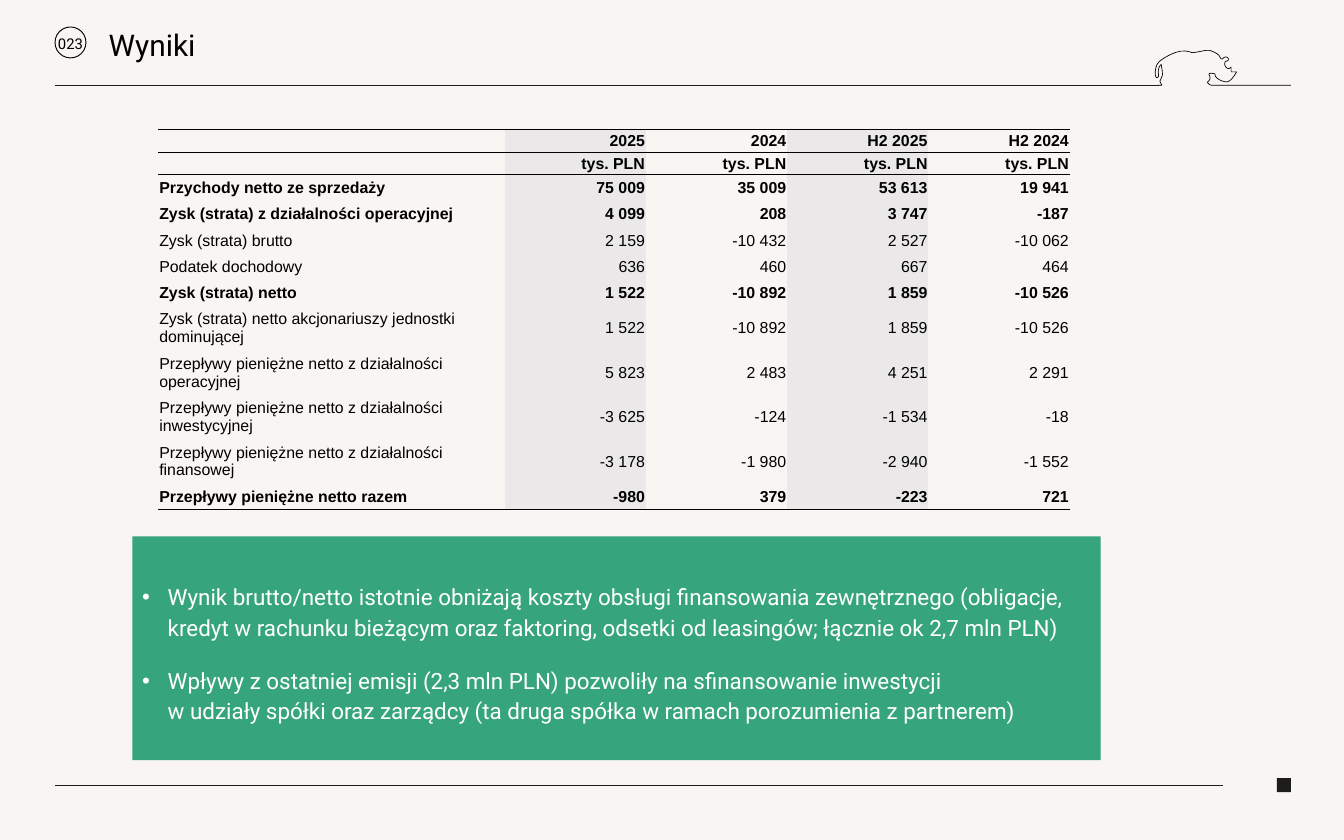
from pptx import Presentation
from pptx.dml.color import RGBColor
from pptx.enum.shapes import MSO_CONNECTOR as CONN, MSO_SHAPE as SHAPE
from pptx.enum.text import MSO_ANCHOR as ANCHOR, PP_ALIGN as ALIGN
from pptx.oxml import parse_xml
from pptx.oxml.ns import nsdecls, qn
from pptx.util import Cm, Pt
from lxml import etree

COLORS = {"paper": "F8F5F2", "ink": "000000", "rule": "1D1D1B",
          "band": "EAE8E8", "green": "37A57C", "white": "FFFFFF"}
TITLE, NUMBER = "Wyniki", "023"
ROWS = [
    ("", "2025", "2024", "H2 2025", "H2 2024"),
    ("", "tys. PLN", "tys. PLN", "tys. PLN", "tys. PLN"),
    ("Przychody netto ze sprzedaży", "75 009", "35 009", "53 613", "19 941"),
    ("Zysk (strata) z działalności operacyjnej", "4 099", "208", "3 747", "-187"),
    ("Zysk (strata) brutto", "2 159", "-10 432", "2 527", "-10 062"),
    ("Podatek dochodowy", "636", "460", "667", "464"),
    ("Zysk (strata) netto", "1 522", "-10 892", "1 859", "-10 526"),
    ("Zysk (strata) netto akcjonariuszy jednostki dominującej",
     "1 522", "-10 892", "1 859", "-10 526"),
    ("Przepływy pieniężne netto z działalności operacyjnej",
     "5 823", "2 483", "4 251", "2 291"),
    ("Przepływy pieniężne netto z działalności inwestycyjnej",
     "-3 625", "-124", "-1 534", "-18"),
    ("Przepływy pieniężne netto z działalności finansowej",
     "-3 178", "-1 980", "-2 940", "-1 552"),
    ("Przepływy pieniężne netto razem", "-980", "379", "-223", "721"),
]
BOLD_ROWS = {0, 1, 2, 3, 6, 11}
HEADER_ROWS, TALL_ROWS = (0, 1), range(7, 11)
BORDERS = {0: ("T", "B"), 1: ("T",), len(ROWS) - 1: ("B",)}
BULLETS = [
    "Wynik brutto/netto istotnie obniżają koszty obsługi finansowania zewnętrznego "
    "(obligacje, kredyt w rachunku bieżącym oraz faktoring, odsetki od leasingów; "
    "łącznie ok 2,7 mln PLN)",
    "Wpływy z ostatniej emisji (2,3 mln PLN) pozwoliły na sfinansowanie inwestycji\v"
    "w udziały spółki oraz zarządcy (ta druga spółka w ramach porozumienia z partnerem)",
]
RULES = [(2.08, 43.79, 3.23), (2.08, 46.23, 29.67)]
ANIMAL_UNIT = 0.0254
ANIMAL_START = (1723, 127)
ANIMAL = [
    (1729, 127), (1726, 121),
    (1726, 121, 1727, 119, 1729, 114), (1731, 112, 1729, 102, 1728, 96),
    (1722, 100, 1724, 111, 1724, 111), (1725, 116, 1719, 120, 1719, 108),
    (1720, 96, 1723, 94, 1726, 91), (1729, 88, 1750, 74, 1764, 76),
    (1778, 78, 1769, 79, 1778, 78), (1787, 77, 1797, 73, 1803, 76),
    (1810, 79, 1814, 81, 1816, 86), (1818, 89, 1819, 88, 1821, 86),
    (1822, 85, 1825, 84, 1827, 86), (1829, 88, 1828, 91, 1825, 91),
    (1822, 91, 1822, 96, 1823, 98), (1824, 100, 1826, 102, 1828, 102),
    (1830, 102, 1832, 100, 1832, 100), (1832, 107), (1840, 107),
    (1840, 107, 1833, 121, 1826, 122), (1820, 122, 1807, 117, 1808, 110),
    (1804, 109, 1800, 109, 1800, 109), (1800, 109, 1798, 110, 1800, 113),
    (1802, 117, 1799, 121, 1797, 122), (1796, 122, 1799, 127, 1804, 127),
    (1921, 127),
]


def rgb(name):
    return RGBColor.from_string(COLORS[name])


def style(p, font, size, color, bold=False):
    for r in p.runs:
        f = r.font
        f.name, f.size, f.bold = font, Pt(size), bold
        f.color.rgb = rgb(color)


def paint(sp, fill=None, line=None, width=0.75):
    sp.shadow.inherit = False
    if fill:
        sp.fill.solid()
        sp.fill.fore_color.rgb = rgb(fill)
    else:
        sp.fill.background()
    if line:
        sp.line.color.rgb = rgb(line)
        sp.line.width = Pt(width)
    else:
        sp.line.fill.background()


def set_margins(box, left, top, right, bottom):
    box.margin_left, box.margin_top = Cm(left), Cm(top)
    box.margin_right, box.margin_bottom = Cm(right), Cm(bottom)


def add_label(s, box, text, size, align):
    tf = s.shapes.add_textbox(*map(Cm, box)).text_frame
    tf.word_wrap = True
    tf.vertical_anchor = ANCHOR.MIDDLE
    set_margins(tf, 0, 0, 0, 0)
    p = tf.paragraphs[0]
    p.text, p.alignment = text, align
    style(p, "Roboto", size, "ink")


def add_rule(s, x1, x2, y):
    c = s.shapes.add_connector(CONN.STRAIGHT, Cm(x1), Cm(y), Cm(x2), Cm(y))
    c.line.color.rgb = rgb("rule")
    c.line.width = Pt(0.75)
    etree.SubElement(c.element.spPr, qn("a:effectLst"))


def trace(start, segments, steps=6):
    points = [start]
    for seg in segments:
        if len(seg) == 2:
            points.append(seg)
            continue
        (x0, y0), (x1, y1, x2, y2, x3, y3) = points[-1], seg
        for i in range(1, steps + 1):
            t = i / steps
            u = 1 - t
            a, b, c, d = u ** 3, 3 * u * u * t, 3 * u * t * t, t ** 3
            points.append((a * x0 + b * x1 + c * x2 + d * x3,
                           a * y0 + b * y1 + c * y2 + d * y3))
    return [(Cm(x * ANIMAL_UNIT), Cm(y * ANIMAL_UNIT)) for x, y in points]


def add_animal(s):
    first, *rest = trace(ANIMAL_START, ANIMAL)
    builder = s.shapes.build_freeform(*first)
    builder.add_line_segments(rest, close=False)
    paint(builder.convert_to_shape(), line="ink")


def add_border(cell, side):
    cell._tc.get_or_add_tcPr().append(parse_xml(
        f'<a:ln{side} {nsdecls("a")} w="6350"><a:solidFill>'
        f'<a:srgbClr val="{COLORS["ink"]}"/></a:solidFill></a:ln{side}>'))


def add_results(s):
    heights = [0.86 if i in HEADER_ROWS else 1.68 if i in TALL_ROWS else 0.99
               for i in range(len(ROWS))]
    widths = [13.08] + [5.34] * 4
    tbl = s.shapes.add_table(len(ROWS), len(widths), Cm(5.99), Cm(4.88),
                             Cm(sum(widths)), Cm(sum(heights))).table
    tbl.first_row = tbl.horz_banding = False
    tbl._tbl.tblPr.find(qn("a:tableStyleId")).text = "{2D5ABB26-0587-4C30-8999-92F81FD0307C}"
    for col, w in zip(tbl.columns, widths):
        col.width = Cm(w)
    for i, (row, h) in enumerate(zip(ROWS, heights)):
        tbl.rows[i].height = Cm(h)
        for j, text in enumerate(row):
            cell = tbl.cell(i, j)
            set_margins(cell, 0.03, 0.03, 0.03, 0)
            cell.vertical_anchor = ANCHOR.MIDDLE
            for side in BORDERS.get(i, ()):
                add_border(cell, side)
            if j % 2:
                cell.fill.solid()
                cell.fill.fore_color.rgb = rgb("band")
            else:
                cell.fill.background()
            p = cell.text_frame.paragraphs[0]
            p.alignment = ALIGN.RIGHT if j else ALIGN.LEFT
            if text:
                p.text = text
                style(p, "Arial", 17, "ink", i in BOLD_ROWS)


def add_comments(s):
    sp = s.shapes.add_shape(SHAPE.RECTANGLE, Cm(5), Cm(20.27), Cm(36.6), Cm(8.46))
    paint(sp, "green")
    tf = sp.text_frame
    tf.word_wrap = True
    tf.vertical_anchor = ANCHOR.MIDDLE
    set_margins(tf, 0.15, 0.81, 0.15, 0.53)
    for i, text in enumerate(BULLETS):
        p = tf.add_paragraph() if i else tf.paragraphs[0]
        p.text, p.alignment = text, ALIGN.LEFT
        p.line_spacing, p.space_before = 1.14, Pt(24 if i else 0)
        pPr = p._p.get_or_add_pPr()
        pPr.set("marL", str(Cm(1.19)))
        pPr.set("indent", str(Cm(-0.97)))
        clr = etree.SubElement(pPr, qn("a:buClr"))
        etree.SubElement(clr, qn("a:srgbClr"), val=COLORS["white"])
        etree.SubElement(pPr, qn("a:buFont"), typeface="Arial")
        etree.SubElement(pPr, qn("a:buChar"), char="•")
        style(p, "Roboto", 24, "white")


def main():
    prs = Presentation()
    prs.slide_width, prs.slide_height = Cm(50.8), Cm(31.75)
    s = prs.slides.add_slide(prs.slide_layouts[6])
    s.background.fill.solid()
    s.background.fill.fore_color.rgb = rgb("paper")
    paint(s.shapes.add_shape(SHAPE.RECTANGLE, Cm(48.26), Cm(29.41), Cm(0.53), Cm(0.53)), "rule")
    for rule in RULES:
        add_rule(s, *rule)
    add_animal(s)
    paint(s.shapes.add_shape(SHAPE.OVAL, Cm(2.08), Cm(1.02), Cm(1.17), Cm(1.17)),
          line="ink", width=1)
    add_label(s, (2.08, 1.09, 1.17, 1.14), NUMBER, 15.9, ALIGN.CENTER)
    add_label(s, (4.11, 0.15, 38.23, 3.07), TITLE, 32, ALIGN.LEFT)
    add_comments(s)
    add_results(s)
    prs.save("out.pptx")


if __name__ == "__main__":
    main()
